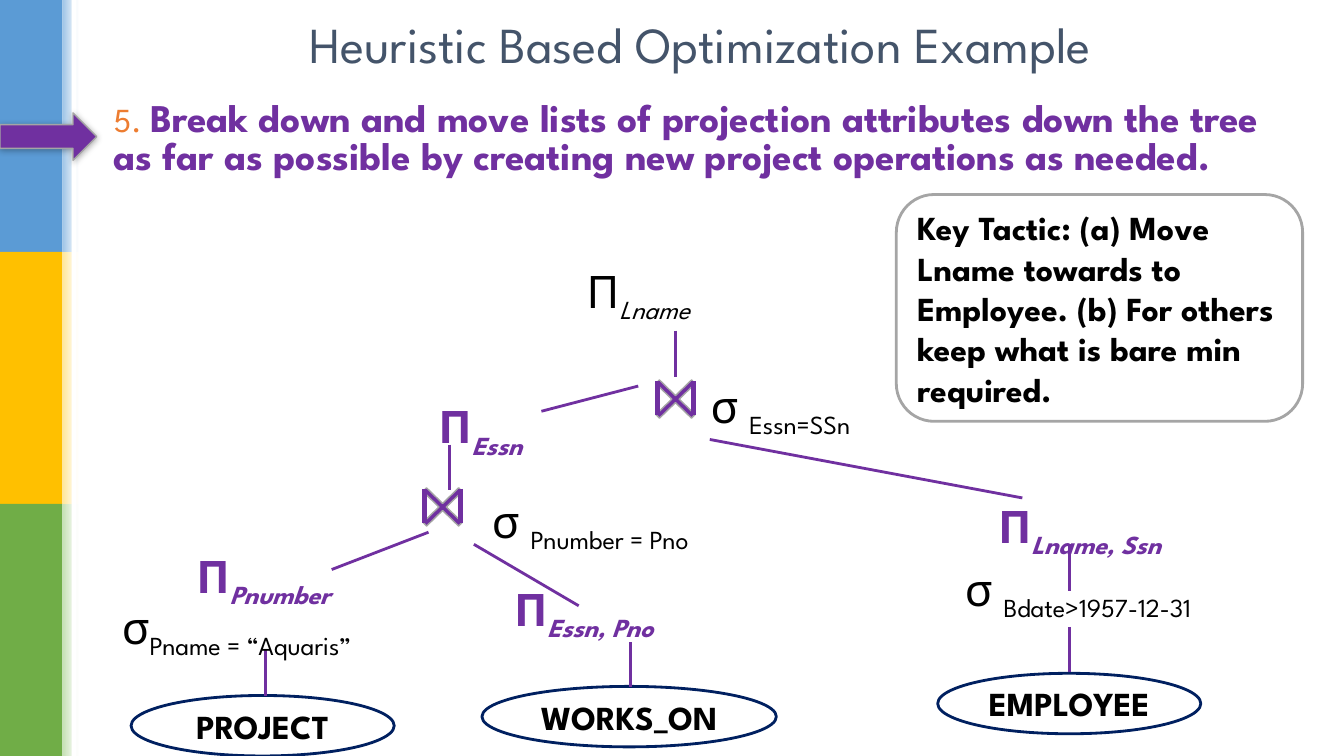
from dataclasses import dataclass

from lxml.etree import SubElement
from pptx import Presentation
from pptx.dml.color import RGBColor
from pptx.enum.shapes import MSO_CONNECTOR, MSO_SHAPE
from pptx.enum.text import MSO_ANCHOR, PP_ALIGN
from pptx.oxml.ns import qn
from pptx.util import Inches, Pt


@dataclass(frozen=True)
class Theme:
    """Colours and type sizes of the slide."""
    font: str = "League Spartan"
    purple: str = "7030A0"
    navy: str = "002060"
    grey: str = "A5A5A5"
    slate: str = "44546A"
    orange: str = "ED7D31"
    black: str = "000000"
    white: str = "FFFFFF"
    title: int = 36
    operator: int = 32
    step: int = 28
    label: int = 24


@dataclass(frozen=True)
class Box:
    """Position and size in inches."""
    x: float
    y: float
    w: float
    h: float


@dataclass(frozen=True)
class Band:
    """One colour band of the left margin."""
    color: str
    tint: str


@dataclass(frozen=True)
class Operator:
    """A relational operator with its subscript."""
    symbol: str
    sub: str
    box: Box
    projection: bool = False
    added: bool = False
    centred: bool = False


@dataclass(frozen=True)
class Relation:
    """A base relation at a leaf of the query tree."""
    name: str
    box: Box


@dataclass(frozen=True)
class Edge:
    """A line between two points."""
    x1: float
    y1: float
    x2: float
    y2: float


T = Theme()
BANDS = [Band("5B9BD5", "9DC3E6"), Band("FFC000", "FFE699"), Band("70AD47", "C5E0B4")]
OPERATORS = [
    Operator("Π", "Lname", Box(5.72, 2.57, 1.67, 0.66), projection=True),
    Operator("σ ", "Essn=SSn", Box(6.95, 3.71, 1.94, 0.64)),
    Operator("Π", "Essn", Box(4.25, 3.91, 2.29, 0.64), projection=True, added=True),
    Operator("σ ", "Pnumber = Pno ", Box(4.44, 4.94, 2.89, 0.52), centred=True),
    Operator("Π", "Pnumber", Box(1.85, 5.39, 2.29, 0.64), projection=True, added=True),
    Operator("σ", "Pname = “Aquaris”", Box(1.11, 5.9, 3.4, 0.64)),
    Operator("Π", "Essn, Pno", Box(5, 5.72, 2.29, 0.64), projection=True, added=True),
    Operator("Π", "Lname, Ssn", Box(9.8, 4.9, 2.29, 0.64), projection=True, added=True),
    Operator("σ ", "Bdate>1957-12-31", Box(9.47, 5.52, 3.12, 0.64)),
]
RELATIONS = [
    Relation("PROJECT", Box(1.3, 6.9, 2.61, 0.6)),
    Relation("WORKS_ON", Box(4.78, 6.81, 2.92, 0.6)),
    Relation("EMPLOYEE", Box(9.3, 6.68, 2.61, 0.6)),
]
EDGES = [
    Edge(6.7, 3.28, 6.7, 3.74), Edge(6.33, 3.83, 5.37, 4.08),
    Edge(10.14, 4.94, 7.04, 4.36), Edge(4.46, 4.41, 4.46, 4.86),
    Edge(4.25, 5.28, 3.29, 5.65), Edge(4.7, 5.4, 5.74, 6.01),
    Edge(2.63, 6.45, 2.63, 6.9), Edge(6.25, 6.37, 6.25, 6.82),
    Edge(10.61, 5.4, 10.61, 5.86), Edge(10.61, 6.22, 10.61, 6.67),
]
JOINS = [Box(6.36, 3.63, 0.68, 0.66), Box(4.05, 4.7, 0.68, 0.66)]


def rgb(color: str) -> RGBColor:
    """Turn a hex string into a colour."""
    return RGBColor.from_string(color)


def add_shape(s, kind: MSO_SHAPE, box: Box, fill: str = "", line: str = "", width: float = 1):
    """Draw a preset shape without the default style."""
    sp = s.shapes.add_shape(kind, Inches(box.x), Inches(box.y), Inches(box.w), Inches(box.h))
    sp.shadow.inherit = False
    if fill:
        sp.fill.solid()
        sp.fill.fore_color.rgb = rgb(fill)
    else:
        sp.fill.background()
    if line:
        sp.line.color.rgb = rgb(line)
        sp.line.width = Pt(width)
    else:
        sp.line.fill.background()
    return sp


def add_edge(s, edge: Edge, width: float = 2) -> None:
    """Draw a straight purple line."""
    ends = (Inches(v) for v in (edge.x1, edge.y1, edge.x2, edge.y2))
    cn = s.shapes.add_connector(MSO_CONNECTOR.STRAIGHT, *ends)
    cn.line.color.rgb = rgb(T.purple)
    cn.line.width = Pt(width)
    SubElement(cn._element.spPr, qn("a:effectLst"))


def add_box(s, box: Box):
    """Add an empty wrapping text box."""
    sp = s.shapes.add_textbox(Inches(box.x), Inches(box.y), Inches(box.w), Inches(box.h))
    sp.text_frame.word_wrap = True
    return sp


def add_run(p, text: str, size: int, color: str, bold: bool = False):
    """Append a formatted run to a paragraph."""
    r = p.add_run()
    r.text = text
    r.font.name = T.font
    r.font.size = Pt(size)
    r.font.bold = bold
    r.font.color.rgb = rgb(color)
    return r


def write(sp, text: str, size: int, color: str, bold: bool, align: PP_ALIGN) -> None:
    """Write one vertically centred paragraph in a shape."""
    tf = sp.text_frame
    tf.word_wrap = True
    tf.vertical_anchor = MSO_ANCHOR.MIDDLE
    tf.paragraphs[0].alignment = align
    add_run(tf.paragraphs[0], text, size, color, bold)


def add_margin(s) -> None:
    """Draw the three bands with their fading edges."""
    for i, band in enumerate(BANDS):
        add_shape(s, MSO_SHAPE.RECTANGLE, Box(0, 2.5 * i, 0.62, 2.5), band.color)
        sp = add_shape(s, MSO_SHAPE.RECTANGLE, Box(0.62, 2.5 * i, 0.16, 2.5))
        sp.fill.gradient()
        sp.fill.gradient_angle = 0
        for stop, color in zip(sp.fill.gradient_stops, (band.tint, T.white)):
            stop.color.rgb = rgb(color)
    add_shape(s, MSO_SHAPE.RECTANGLE, Box(0.71, 0, 0.05, 7.5), T.white)


def add_pointer(s) -> None:
    """Draw the shadowed arrow beside the step."""
    sp = add_shape(s, MSO_SHAPE.RIGHT_ARROW, Box(0, 1.12, 0.96, 0.47), T.purple, T.grey)
    effects = sp._element.spPr.find(qn("a:effectLst"))
    shadow = SubElement(effects, qn("a:outerShdw"), blurRad=str(Pt(5)), dist=str(Pt(1)),
                        dir="5400000", rotWithShape="0")
    color = SubElement(shadow, qn("a:srgbClr"), val=T.black)
    SubElement(color, qn("a:alpha"), val="32000")


def add_operator(s, op: Operator) -> None:
    """Write an operator and its subscript."""
    tf = add_box(s, op.box).text_frame
    p = tf.paragraphs[0]
    if op.centred:
        tf.vertical_anchor = MSO_ANCHOR.MIDDLE
        p.alignment = PP_ALIGN.CENTER
    color = T.purple if op.added else T.black
    add_run(p, op.symbol, T.operator, color, op.added)
    r = add_run(p, op.sub, T.operator, color, op.added)
    r.font.italic = op.projection
    r.font._element.set("baseline", "-25000")


def add_join(s, box: Box) -> None:
    """Draw a join symbol as a cross between two bars."""
    sp = add_shape(s, MSO_SHAPE.MATH_MULTIPLY, box, T.purple, T.grey)
    sp.adjustments[0] = 0.077
    for dx in (0.16, 0.52):
        add_edge(s, Edge(box.x + dx, box.y + 0.15, box.x + dx, box.y + 0.49), 3.25)


def main() -> None:
    """Build and save the slide."""
    prs = Presentation()
    prs.slide_width, prs.slide_height = Inches(13.33), Inches(7.5)
    s = prs.slides.add_slide(prs.slide_layouts[6])
    add_margin(s)
    write(add_box(s, Box(1.3, 0.15, 11.29, 0.57)), "Heuristic Based Optimization Example",
          T.title, T.slate, False, PP_ALIGN.CENTER)
    p = add_box(s, Box(1.03, 0.97, 12, 1.25)).text_frame.paragraphs[0]
    p.line_spacing = 0.8
    p.space_after = Pt(6)
    add_run(p, "5. ", T.label, T.orange)
    add_run(p, "Break down and move lists of projection attributes down the tree as far as "
            "possible by creating new project operations as needed.", T.step, T.purple, True)
    add_pointer(s)
    for rel in RELATIONS:
        sp = add_shape(s, MSO_SHAPE.OVAL, rel.box, line=T.navy, width=2)
        write(sp, rel.name, T.label, T.black, True, PP_ALIGN.CENTER)
    for edge in EDGES:
        add_edge(s, edge)
    for box in JOINS:
        add_join(s, box)
    for op in OPERATORS:
        add_operator(s, op)
    sp = add_shape(s, MSO_SHAPE.ROUNDED_RECTANGLE, Box(8.89, 1.93, 4.03, 2.25), line=T.grey, width=2)
    write(sp, "Key Tactic: (a) Move Lname towards to Employee. (b) For others keep what is "
          "bare min required.", T.label, T.black, True, PP_ALIGN.LEFT)
    prs.save("out.pptx")


if __name__ == "__main__":
    main()
